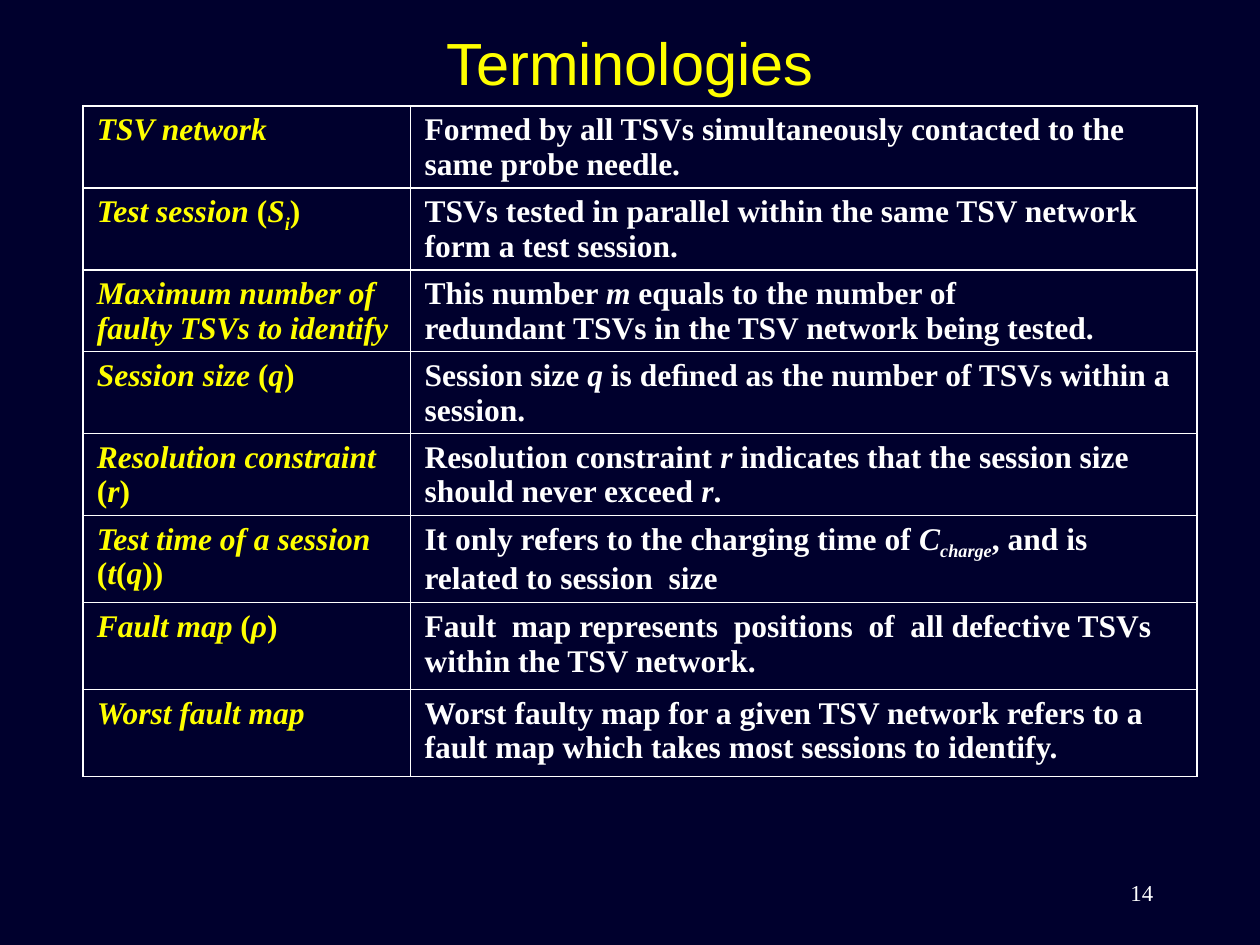
"""Build the Terminologies slide: a two-column table of terms and definitions."""
from lxml.etree import SubElement
from pptx import Presentation
from pptx.dml.color import RGBColor
from pptx.enum.text import MSO_ANCHOR as Anchor, PP_ALIGN as Align
from pptx.oxml.ns import qn
from pptx.util import Inches, Pt

NAVY, YELLOW, WHITE = "00002D", "FFFF00", "FFFFFF"
SERIF = "Times New Roman"


def style(font, size, face, color):
    font.size, font.name = Pt(size), face
    font.color.rgb = RGBColor.from_string(color)


def write_marked(paragraph, marked, color):
    """Write bold text in which *...* is italic and ~...~ is subscript."""
    for i, slanted in enumerate(marked.split("*")):
        for j, words in enumerate(slanted.split("~")):
            if words:
                run = paragraph.add_run()
                run.text = words
                style(run.font, 18, SERIF, color)
                run.font.bold, run.font.italic = True, i % 2 == 1
                if j % 2:
                    run.font._element.set("baseline", "-25000")


terms = [
    ("*TSV network*",
     "Formed by all TSVs simultaneously contacted to the same probe needle."),
    ("*Test session *(*S~i~*)",
     "TSVs tested in parallel within the same TSV network form a test session."),
    ("*Maximum number of faulty TSVs to identify*",
     "This number *m* equals to the number of\n"
     "redundant TSVs in the TSV network being tested."),
    ("*Session size *(*q*)",
     "Session size *q* is deﬁned as the number of TSVs within a session."),
    ("*Resolution constraint *(*r*)",
     "Resolution constraint *r* indicates that the session size should never exceed *r*."),
    ("*Test time of a session *(*t*(*q*))",
     "It only refers to the charging time of *C~charge~*, and is related to session  size"),
    ("*Fault map *(*ρ*)",
     "Fault  map represents  positions  of  all defective TSVs within the TSV network."),
    ("*Worst fault map*",
     "Worst faulty map for a given TSV network refers to a fault map which takes "
     "most sessions to identify."),
]
column_widths = [2.6, 6.24]
row_heights = [0.65] * 5 + [0.69] * 3

deck = Presentation()
deck.slide_width, deck.slide_height = Inches(10), Inches(7.5)
slide = deck.slides.add_slide(deck.slide_layouts[6])
slide.background.fill.solid()
slide.background.fill.fore_color.rgb = RGBColor.from_string(NAVY)

labels = [
    ("Terminologies", (0.5, 0.16, 9, 1.25), 34, "Arial", YELLOW, Align.CENTER, Anchor.TOP),
    ("14", (7.17, 6.83, 2.08, 0.5), 13, SERIF, WHITE, Align.RIGHT, Anchor.MIDDLE),
]
for words, place, size, face, color, align, anchor in labels:
    frame = slide.shapes.add_textbox(*map(Inches, place)).text_frame
    frame.word_wrap, frame.vertical_anchor = True, anchor
    frame.text = words
    frame.paragraphs[0].alignment = align
    style(frame.paragraphs[0].runs[0].font, size, face, color)

glossary = slide.shapes.add_table(
    len(terms), 2, Inches(0.66), Inches(0.84),
    Inches(sum(column_widths)), Inches(sum(row_heights))).table
glossary.first_row = glossary.horz_banding = False
for column, width in zip(glossary.columns, column_widths):
    column.width = Inches(width)

for row, (height, entry) in enumerate(zip(row_heights, terms)):
    glossary.rows[row].height = Inches(height)
    for col, (marked, color) in enumerate(zip(entry, (YELLOW, WHITE))):
        cell = glossary.cell(row, col)
        cell.margin_left = cell.margin_right = Inches(0.11)
        cell.margin_top, cell.margin_bottom = Inches(0.05), 0
        borders = cell._tc.get_or_add_tcPr()
        for side in ("a:lnL", "a:lnR", "a:lnT", "a:lnB"):
            line = SubElement(borders, qn(side), w=str(Pt(1)))
            SubElement(SubElement(line, qn("a:solidFill")), qn("a:srgbClr"), val=WHITE)
        cell.fill.background()
        for number, sentence in enumerate(marked.split("\n")):
            frame = cell.text_frame
            paragraph = frame.add_paragraph() if number else frame.paragraphs[0]
            write_marked(paragraph, sentence, color)

deck.save("out.pptx")
